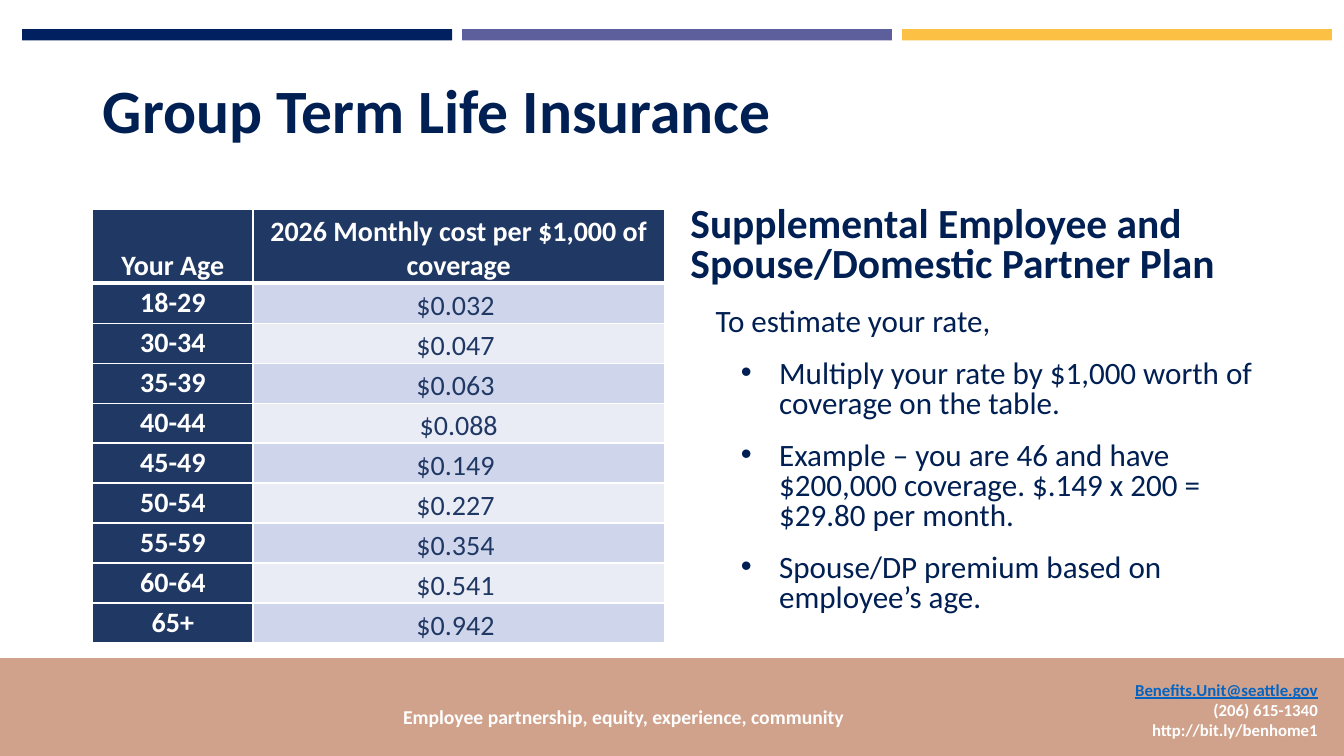
from pptx import Presentation
from pptx.dml.color import RGBColor
from pptx.enum.shapes import MSO_SHAPE
from pptx.enum.text import MSO_ANCHOR, PP_ALIGN
from pptx.oxml.ns import qn
from pptx.util import Inches, Pt
from lxml.etree import SubElement

FONT = "Calibri"
WHITE, NAVY, TABLE_NAVY = "FFFFFF", "001F52", "203864"
BANDS = ("CFD5EA", "E9EBF5")
RATES = [
    ("18-29", "$0.032 "), ("30-34", "$0.047 "), ("35-39", "$0.063 "),
    ("40-44", "$0.088"), ("45-49", "$0.149 "), ("50-54", "$0.227 "),
    ("55-59", "$0.354 "), ("60-64", "$0.541 "), ("65+", "$0.942 "),
]
BULLETS = [
    "Multiply your rate by $1,000 worth of coverage on the table.",
    "Example – you are 46 and have $200,000 coverage. $.149 x 200 = $29.80 per month.",
    "Spouse/DP premium based on employee’s age.",
]


def color(value):
    """Return the colour for a hex string."""
    return RGBColor.from_string(value)


def set_font(paragraph, size, value, bold=False):
    """Format all text of a paragraph."""
    font = paragraph.font
    font.name, font.size, font.bold = FONT, Pt(size), bold
    font.color.rgb = color(value)


def add_rectangle(slide, left, top, width, height, fill):
    """Add a plain filled rectangle."""
    shape = slide.shapes.add_shape(
        MSO_SHAPE.RECTANGLE, Inches(left), Inches(top), Inches(width), Inches(height))
    shape.shadow.inherit = False
    shape.fill.solid()
    shape.fill.fore_color.rgb = color(fill)
    shape.line.fill.background()


def add_text_frame(slide, left, top, width, height, anchor=MSO_ANCHOR.MIDDLE):
    """Add a wrapping text box and return its text frame."""
    box = slide.shapes.add_textbox(
        Inches(left), Inches(top), Inches(width), Inches(height))
    frame = box.text_frame
    frame.word_wrap = True
    frame.vertical_anchor = anchor
    return frame


def add_top_bars(slide, left, top, width, height):
    """Divide the box into three coloured bars with equal gaps."""
    gap = 0.1
    bar_width = (width - 2 * gap) / 3
    for index, fill in enumerate(("002060", "5D5F9C", "FCC044")):
        add_rectangle(slide, left + index * (bar_width + gap), top, bar_width, height, fill)


def add_footer(slide, left, top, width, height):
    """Add the footer band with the motto and contact details."""
    add_rectangle(slide, left, top, width, height, "D0A28B")
    motto = add_text_frame(slide, left + 3.9, top + 0.24, 5.1, 0.67).paragraphs[0]
    motto.text = "Employee partnership, equity, experience, community"
    set_font(motto, 14, WHITE, True)
    contact = add_text_frame(slide, left + 8.07, top + 0.15, 5.1, 0.72)
    contact.text = "Benefits.Unit@seattle.gov\n(206) 615-1340\nhttp://bit.ly/benhome1"
    for paragraph in contact.paragraphs:
        paragraph.alignment = PP_ALIGN.RIGHT
        set_font(paragraph, 12, WHITE, True)
    email = contact.paragraphs[0]
    email.font.color.rgb = color("0563C1")
    email.font.underline = True


def set_title(slide, left, top, width, height):
    """Place and format the slide title."""
    title = slide.shapes.title
    title.left, title.top = Inches(left), Inches(top)
    title.width, title.height = Inches(width), Inches(height)
    title.text_frame.vertical_anchor = MSO_ANCHOR.MIDDLE
    paragraph = title.text_frame.paragraphs[0]
    paragraph.text = "Group Term Life Insurance"
    paragraph.alignment = PP_ALIGN.LEFT
    paragraph.line_spacing = 0.9
    set_font(paragraph, 44, NAVY, True)


def add_borders(cell, top_width, bottom_width):
    """Draw white borders around a table cell."""
    properties = cell._tc.get_or_add_tcPr()
    widths = {"a:lnL": 1, "a:lnR": 1, "a:lnT": top_width, "a:lnB": bottom_width}
    for tag, width in widths.items():
        line = SubElement(properties, qn(tag), w=str(Pt(width)))
        fill = SubElement(line, qn("a:solidFill"))
        SubElement(fill, qn("a:srgbClr"), val=WHITE)


def add_rate_table(slide, left, top, width, height):
    """Add the table of monthly rates by age."""
    rows = [("Your Age", "2026 Monthly cost per $1,000 of coverage"), *RATES]
    table = slide.shapes.add_table(
        len(rows), 2, Inches(left), Inches(top), Inches(width), Inches(height)).table
    age_width, header_height = 1.59, 0.73
    table.columns[0].width = Inches(age_width)
    table.columns[1].width = Inches(width - age_width)
    for row_index, texts in enumerate(rows):
        is_header = row_index == 0
        table.rows[row_index].height = Inches(
            header_height if is_header else (height - header_height) / len(RATES))
        for column_index, text in enumerate(texts):
            cell = table.cell(row_index, column_index)
            is_rate = column_index == 1 and not is_header
            is_age = column_index == 0 and not is_header
            add_borders(cell, 3 if row_index == 1 else 1, 3 if is_header else 1)
            cell.fill.solid()
            cell.fill.fore_color.rgb = color(
                BANDS[(row_index - 1) % 2] if is_rate else TABLE_NAVY)
            cell.margin_left = cell.margin_right = Inches(0.13)
            cell.margin_top = cell.margin_bottom = 0
            cell.vertical_anchor = MSO_ANCHOR.MIDDLE if is_age else MSO_ANCHOR.BOTTOM
            paragraph = cell.text_frame.paragraphs[0]
            paragraph.text = text
            paragraph.alignment = PP_ALIGN.CENTER
            set_font(paragraph, 20, TABLE_NAVY if is_rate else WHITE, not is_rate)


def add_plan_text(slide, left, top, width, height):
    """Add the plan heading, introduction and bullets."""
    frame = add_text_frame(slide, left, top, width, height, MSO_ANCHOR.TOP)
    frame.text = "\n".join([
        "Supplemental Employee and Spouse/Domestic Partner Plan",
        "To estimate your rate,", *BULLETS])
    for index, paragraph in enumerate(frame.paragraphs):
        paragraph.line_spacing = 0.8
        paragraph.space_before = Pt(10 if index else 0)
        paragraph.space_after = Pt(6)
        properties = paragraph._p.get_or_add_pPr()
        if index == 1:
            properties.set("marL", str(Inches(0.25)))
        elif index > 1:
            properties.set("marL", str(Inches(0.88)))
            properties.set("indent", str(Inches(-0.38)))
            SubElement(properties, qn("a:buFont"), typeface="Arial")
            SubElement(properties, qn("a:buChar"), char="•")
        set_font(paragraph, 22.2 if index else 29.6, NAVY, index == 0)


def main():
    """Build and save the presentation."""
    presentation = Presentation()
    presentation.slide_width = Inches(13.33)
    presentation.slide_height = Inches(7.5)
    slide = presentation.slides.add_slide(presentation.slide_layouts[5])
    add_footer(slide, 0, 6.53, 13.33, 0.97)
    add_top_bars(slide, 0.22, 0.29, 12.99, 0.11)
    set_title(slide, 0.92, 0.4, 11.5, 1.45)
    add_plan_text(slide, 6.75, 2, 6.1, 4.48)
    add_rate_table(slide, 0.92, 2.08, 5.67, 4.3)
    presentation.save("out.pptx")


if __name__ == "__main__":
    main()
